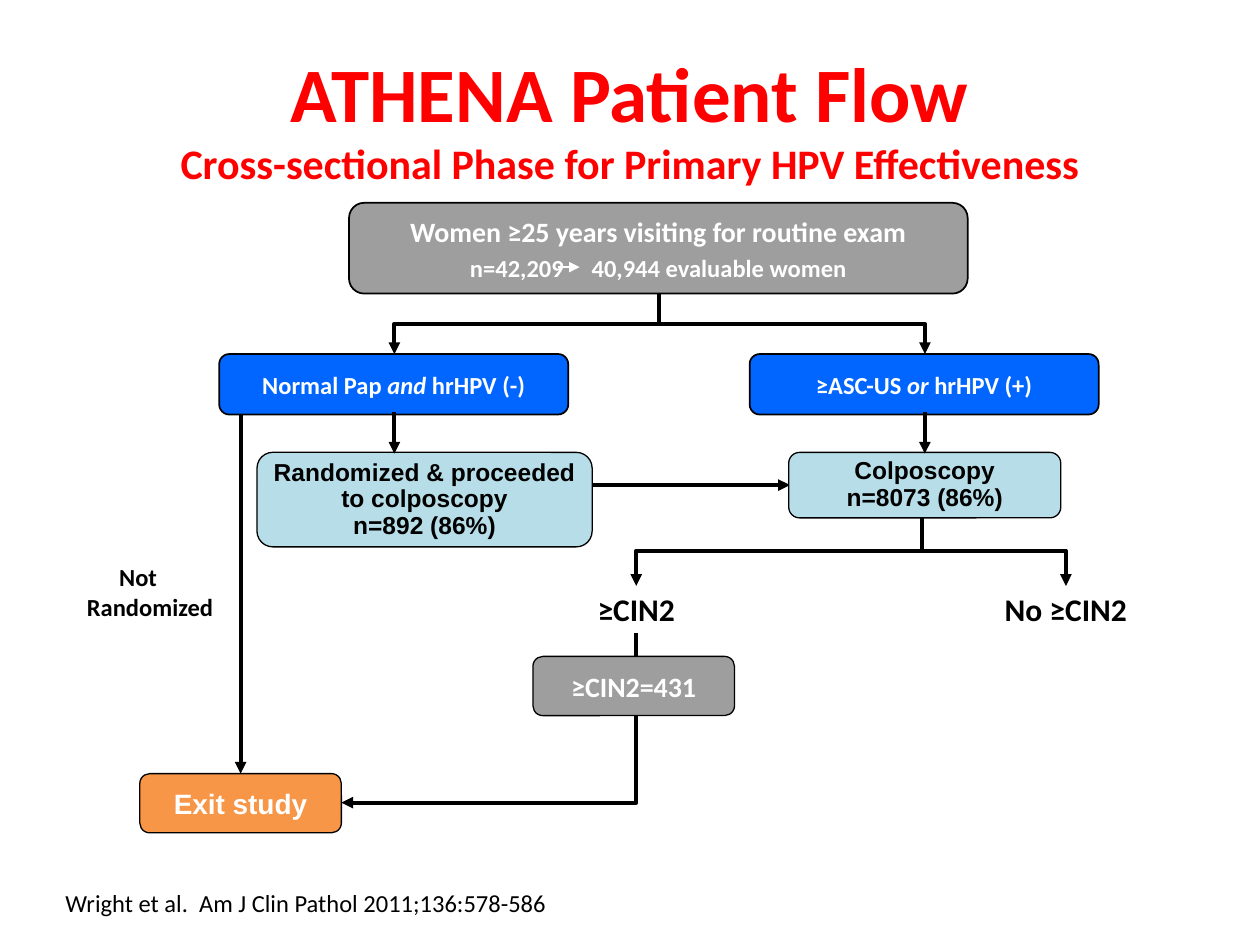
"""Build the ATHENA patient flow slide."""
from copy import deepcopy

from lxml import etree
from pptx import Presentation
from pptx.dml.color import RGBColor
from pptx.enum.shapes import MSO_CONNECTOR, MSO_SHAPE
from pptx.enum.text import MSO_ANCHOR, PP_ALIGN
from pptx.oxml.ns import qn
from pptx.util import Inches, Pt

STRAIGHT, ELBOW = MSO_CONNECTOR.STRAIGHT, MSO_CONNECTOR.ELBOW
ROUNDED, DECISION = MSO_SHAPE.ROUNDED_RECTANGLE, MSO_SHAPE.FLOWCHART_DECISION
MIDDLE, TOP = MSO_ANCHOR.MIDDLE, MSO_ANCHOR.TOP
CENTER, LEFT = PP_ALIGN.CENTER, PP_ALIGN.LEFT

BLACK = RGBColor(0x00, 0x00, 0x00)
WHITE = RGBColor(0xFF, 0xFF, 0xFF)
RED = RGBColor(0xFF, 0x00, 0x00)
GRAY = RGBColor(0x9E, 0x9E, 0x9E)
BLUE = RGBColor(0x00, 0x66, 0xFF)
PALE_BLUE = RGBColor(0xB7, 0xDE, 0xE8)
ORANGE = RGBColor(0xF7, 0x96, 0x46)


def write_text(paragraph, text, *, size=14, font="Calibri", color=BLACK,
               bold=True, italic=False, spacing=None):
    """Append text to a paragraph, turning newlines into line breaks."""
    for index, line in enumerate(text.split("\n")):
        if index:
            paragraph.add_line_break()
            paragraph._p[-1].append(deepcopy(run._r.rPr))
        if not line:
            continue
        run = paragraph.add_run()
        run.text = line
        run.font.name, run.font.size = font, Pt(size)
        run.font.bold, run.font.italic = bold, italic
        run.font.color.rgb = color
        if spacing:
            run._r.rPr.set("spc", str(round(spacing * 100)))


class FlowSlide:
    """Hold the slide and the shared style of the flow chart."""

    inset = 0.02
    line_width = 2.25

    def __init__(self, presentation):
        self.slide = presentation.slides.add_slide(presentation.slide_layouts[6])

    def fill_frame(self, shape, paragraphs, *, align=CENTER, anchor=MIDDLE, wrap=True,
                   insets=(inset,) * 4, before=0, line_spacing=None, **style):
        """Write paragraphs, each a list of (text, format) runs."""
        frame = shape.text_frame
        frame.word_wrap, frame.vertical_anchor = wrap, anchor
        (frame.margin_left, frame.margin_top,
         frame.margin_right, frame.margin_bottom) = map(Inches, insets)
        for index, runs in enumerate(paragraphs):
            paragraph = frame.add_paragraph() if index else frame.paragraphs[0]
            paragraph.alignment = align
            paragraph.space_before = Pt(before)
            if line_spacing:
                paragraph.line_spacing = line_spacing
            for text, changes in runs:
                write_text(paragraph, text, **{**style, **changes})

    def text(self, bounds, paragraphs, **style):
        """Add a text box."""
        shape = self.slide.shapes.add_textbox(*map(Inches, bounds))
        self.fill_frame(shape, paragraphs, **style)
        return shape

    def box(self, bounds, paragraphs, *, fill=None, border=0.75, kind=ROUNDED, **style):
        """Add a flow chart box, bare when it has no fill."""
        shape = self.slide.shapes.add_shape(kind, *map(Inches, bounds))
        shape.shadow.inherit = False
        if fill is None:
            shape.fill.background()
            shape.line.fill.background()
        else:
            shape.fill.solid()
            shape.fill.fore_color.rgb = fill
            shape.line.color.rgb = BLACK
            shape.line.width = Pt(border)
        self.fill_frame(shape, paragraphs, **style)

    def line(self, start, end, *, kind=STRAIGHT, color=BLACK, width=line_width, arrow=True):
        """Add a connector."""
        connector = self.slide.shapes.add_connector(kind, *map(Inches, (*start, *end)))
        connector.line.color.rgb = color
        connector.line.width = Pt(width)
        properties = connector.element.spPr
        if arrow:
            etree.SubElement(properties.find(qn("a:ln")), qn("a:tailEnd"), type="triangle")
        etree.SubElement(properties, qn("a:effectLst"))
        return connector

    def corner(self, start, end):
        """Add an arrow that runs across and then down."""
        connector = self.line(start, end, kind=ELBOW)
        connector.element.spPr.prstGeom.set("prst", "bentConnector2")
        return connector

    def drop(self, start, end, *, bends=2):
        """Add an arrow that leaves downward, as a rotated elbow."""
        (x1, y1), (x2, y2) = start, end
        middle_x, middle_y = (x1 + x2) / 2, (y1 + y2) / 2
        half_width, half_height = abs(y2 - y1) / 2, abs(x2 - x1) / 2
        side = 1 if x2 < x1 else -1
        connector = self.line(
            (middle_x - side * half_width, middle_y - half_height),
            (middle_x + side * half_width, middle_y + half_height), kind=ELBOW)
        properties = connector.element.spPr
        properties.find(qn("a:xfrm")).set("rot", str((90 if side > 0 else 270) * 60000))
        properties.prstGeom.set("prst", f"bentConnector{bends + 1}")


def main():
    """Create and save the presentation."""
    presentation = Presentation()
    presentation.slide_width, presentation.slide_height = Inches(10), Inches(7.5)
    flow = FlowSlide(presentation)
    normal_x, positive_x, cin_x, no_cin_x = 3.13, 7.34, 5.05, 8.46
    split_y, outcome_y = 4.37, 4.65

    flow.line((7.32, 4.09), (7.32, split_y), arrow=False)
    flow.text((0.5, 0.3, 9, 1.25), [[
        ("ATHENA Patient Flow\n", {"size": 44}),
        ("Cross-sectional Phase for Primary HPV Effectiveness", {"size": 24}),
    ]], color=RED, insets=(0.1, 0.05, 0.1, 0.05))
    label = flow.text((0.44, 4.4, 1.41, 0.59), [[("Not\nRandomized", {})]],
                      wrap=False, insets=(0, 0.1, 0.1, 0.1))
    indents = label.text_frame.paragraphs[0]._p.get_or_add_pPr()
    indents.set("marL", str(Inches(0.19)))
    indents.set("indent", str(Inches(-0.19)))
    flow.line((1.91, 3.29), (1.91, 6.14))

    flow.box((2.77, 1.61, 4.91, 0.72), [
        [("Women ≥25 years visiting for routine exam", {"size": 16})],
        [("n=42,209", {}), (" ", {"spacing": 12.6}), ("40,944 evaluable women", {})],
    ], fill=GRAY, border=1, color=WHITE, before=3)
    for x, finding, joint, result in (
            (normal_x, "Normal Pap ", "and ", "hrHPV (-)"),
            (positive_x, "≥ASC-US ", "or ", "hrHPV (+)")):
        flow.box((x - 1.39, 2.81, 2.77, 0.48),
                 [[(finding, {}), (joint, {"italic": True}), (result, {})]],
                 fill=BLUE, border=1, color=WHITE)

    flow.line((4.2, 3.85), (6.27, 3.85))
    for bounds, text in (
            ((2.04, 3.59, 2.66, 0.75), "Randomized & proceeded to colposcopy\nn=892 (86%)"),
            ((6.26, 3.59, 2.16, 0.52), "Colposcopy\nn=8073 (86%)")):
        flow.box(bounds, [[(text, {})]], fill=PALE_BLUE, font="Arial", line_spacing=0.9)
    flow.box((1.11, 6.14, 1.6, 0.47), [[("Exit study", {})]],
             fill=ORANGE, color=WHITE, font="Arial", size=16)
    flow.drop((cin_x, 5.02), (2.71, 6.37), bends=1)
    flow.box((4.23, 5.21, 1.6, 0.47), [[("≥CIN2=431", {})]],
             fill=GRAY, color=WHITE, size=16)

    for x in (positive_x, normal_x):
        flow.drop((5.23, 2.33), (x, 2.81))
        flow.line((x, 3.27), (x, 3.6))
    flow.line((6.38, split_y), (8.21, split_y), arrow=False)
    for x, branch_x, text in ((no_cin_x, 8.19, "No ≥CIN2"), (cin_x, 6.47, "≥CIN2")):
        flow.corner((branch_x, split_y), (x, outcome_y))
        flow.box((x - 0.7, outcome_y, 1.4, 0.37), [[(text, {})]],
                 kind=DECISION, size=18, wrap=False)
    flow.line((4.43, 2.12), (4.6, 2.12), color=WHITE, width=1.25)
    flow.text((0.42, 7, 5.65, 0.34),
              [[("Wright et al.  Am J Clin Pathol 2011;136:578-586", {})]],
              align=LEFT, anchor=TOP, bold=False, insets=(0.1, 0.05, 0.1, 0.05))
    presentation.save("out.pptx")


if __name__ == "__main__":
    main()
